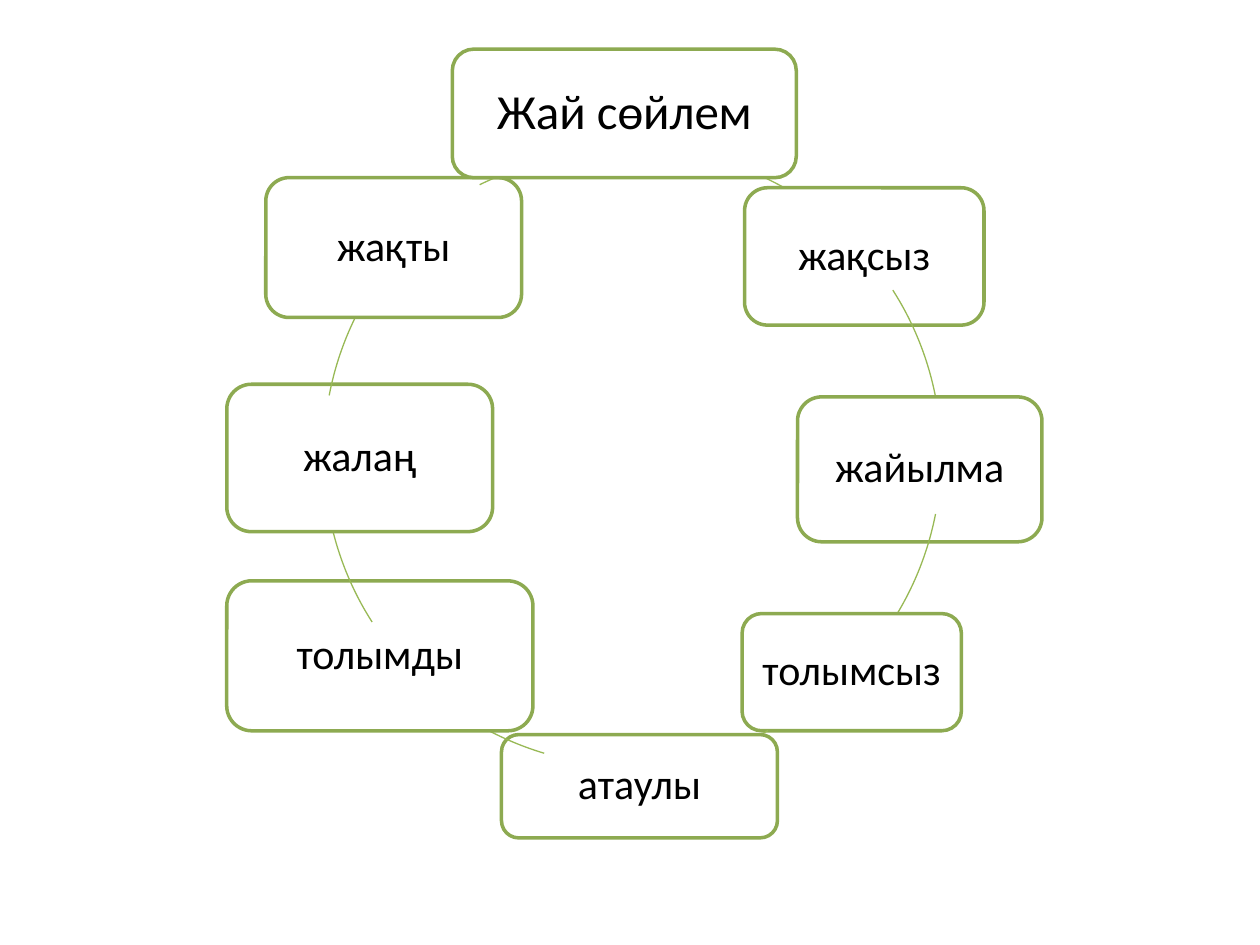
from pptx import Presentation
from pptx import util as u
from pptx.dml.color import RGBColor
from pptx.enum import shapes, text

deck = Presentation()
deck.slide_width, deck.slide_height = u.Inches(10), u.Inches(7.5)
page = deck.slides.add_slide(deck.slide_layouts[6])

# Grid: 100 columns by 75 rows of square cells
cell = deck.slide_width / 100
ring = 48.7  # diameter of the cycle, in cells


def paint(form, hue):
    form.solid()
    form.fore_color.rgb = RGBColor.from_string(hue)


def place(kind, left, top, wide, high, hue, width):
    spot = [round(n * cell) for n in (left, top, wide, high)]
    item = page.shapes.add_shape(kind, *spot)
    item.shadow.inherit = False
    paint(item.line.fill, hue)
    item.line.width = u.Pt(width)
    return item


# Clockwise: word, size, box, ring corner, arc start and end in degrees
nodes = [
    ("жақсыз", 24, (59.1, 14.9, 19, 10.9), (26, 11.8), (288.1, 299)),
    ("жайылма", 24, (63.3, 31.5, 19.4, 11.5), (26, 11.8), (327.4, 348.7)),
    ("толымсыз", 24, (58.9, 48.7, 17.4, 9.3), (26, 11.8), (11, 30.8)),
    ("атаулы", 24, (39.8, 58.3, 21.9, 8.2), (24, 12.8), (58.8, 67.2)),
    ("толымды", 24, (18, 46.1, 24.3, 11.9), (25.8, 12.1), (106.6, 117.6)),
    ("жалаң", 24, (18, 30.5, 21.1, 11.7), (25.7, 11.9), (147.4, 168.3)),
    ("жақты", 24, (21.1, 14.1, 20.3, 11.1), (25.7, 11.6), (190.8, 212.1)),
    ("Жай сөйлем", 28, (35.9, 3.9, 27.3, 10.2), (24.4, 12.2), (244, 255.8)),
]

for word, size, box, corner, span in nodes:
    # Arc leading to the box; angles are stored in 60000ths of a degree
    arc = place(shapes.MSO_SHAPE.ARC, *corner, ring, ring, "98B955", 0.75)
    arc.fill.background()
    for i, angle in enumerate(span):
        arc.adjustments[i] = angle * 0.6

    # Box with its word; the rounded corners already inset the text
    node = place(shapes.MSO_SHAPE.ROUNDED_RECTANGLE, *box, "8DAA51", 2)
    paint(node.fill, "FFFFFF")
    frame = node.text_frame
    frame.text = word
    frame.word_wrap = True
    frame.vertical_anchor = text.MSO_ANCHOR.MIDDLE
    frame.margin_left = frame.margin_right = u.Inches(0.07)
    frame.margin_top = frame.margin_bottom = u.Inches(0.07)
    line = frame.paragraphs[0]
    line.alignment = text.PP_ALIGN.CENTER
    line.line_spacing = 0.9
    font = line.runs[0].font
    font.name, font.size = "Calibri", u.Pt(size)
    paint(font.fill, "000000")

deck.save("out.pptx")
